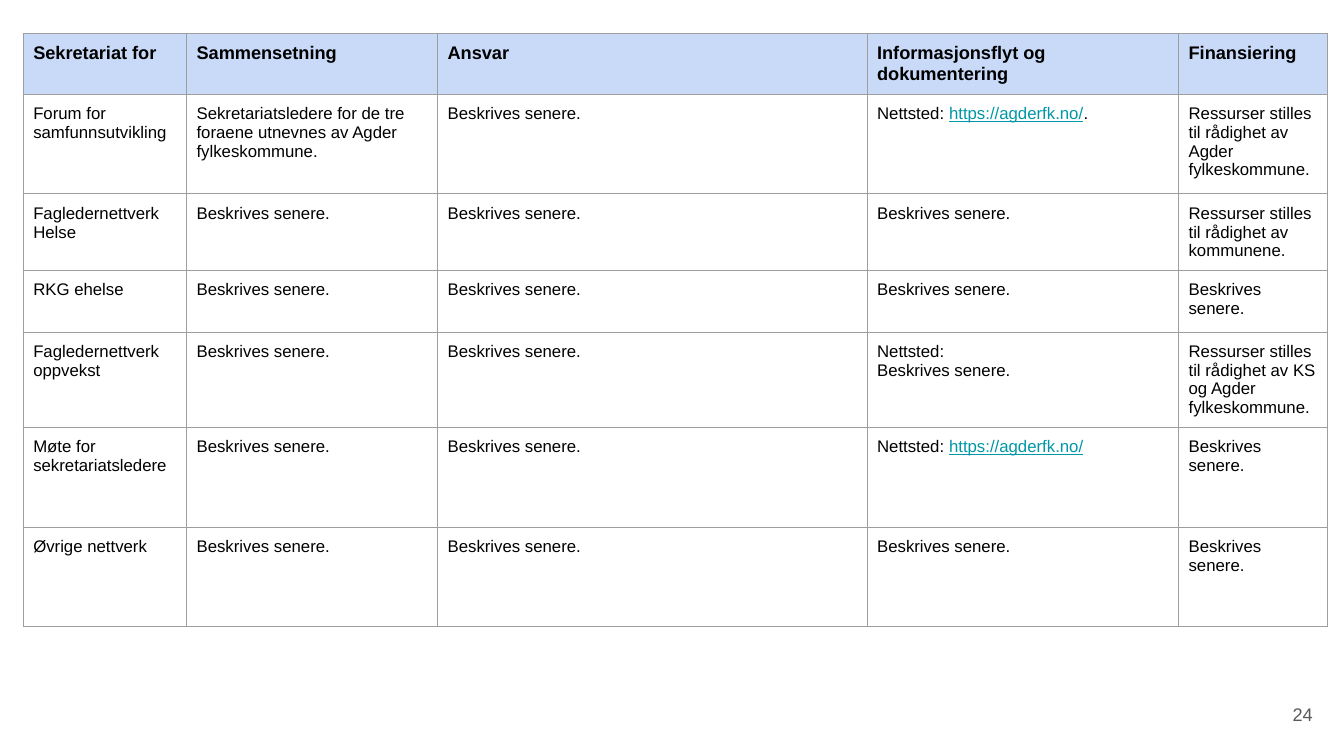
from lxml import etree
from pptx import Presentation
from pptx import util as u
from pptx.dml.color import RGBColor
from pptx.enum import text
from pptx.oxml.ns import qn

SLIDE_W, SLIDE_H = 13.33, 7.5
FONT = "Arial"
BLACK, GREY, BORDER = "000000", "595959", "9E9E9E"
LINK, HEADER_FILL = "0097A7", "C9DAF8"

COLUMNS = [1.62, 2.49, 4.26, 3.09, 1.48]
ROWS = [0.58, 0.99, 0.61, 0.61, 0.47, 0.99, 0.99]

LATER = "Beskrives senere."
SITE = "https://agderfk.no/"
HEADINGS = ["Sekretariat for", "Sammensetning", "Ansvar",
            "Informasjonsflyt og dokumentering", "Finansiering"]
# A cell is a string with one paragraph per line
BODY = [
    ["Forum for samfunnsutvikling",
     "Sekretariatsledere for de tre foraene utnevnes av Agder fylkeskommune.",
     LATER, f"Nettsted: {SITE}.",
     "Ressurser stilles til rådighet av Agder fylkeskommune."],
    ["Fagledernettverk Helse", LATER, LATER, LATER,
     "Ressurser stilles til rådighet av kommunene."],
    ["RKG ehelse", LATER, LATER, LATER, LATER],
    ["Fagledernettverk oppvekst", LATER, LATER, f"Nettsted:\n{LATER}",
     "Ressurser stilles til rådighet av KS og Agder fylkeskommune."],
    ["Møte for sekretariatsledere", LATER, LATER, f"Nettsted: {SITE}", LATER],
    ["Øvrige nettverk", LATER, LATER, LATER, LATER],
]


def rgb(color):
    return RGBColor.from_string(color)


def add_run(p, content, size, color, bold=False, underline=False):
    r = p.add_run()
    r.text = content
    r.font.name, r.font.size = FONT, u.Pt(size)
    r.font.bold, r.font.underline = bold, underline
    r.font.color.rgb = rgb(color)


def write(tf, content, size=12, color=BLACK, bold=False, align=None):
    """Write one paragraph per line, with web addresses as link text."""
    tf.word_wrap = True
    for i, line in enumerate(content.split("\n")):
        p = tf.add_paragraph() if i else tf.paragraphs[0]
        p.alignment = align
        before, site, after = line.partition(SITE)
        if before:
            add_run(p, before, size, color, bold)
        if site:
            add_run(p, site, size, LINK, bold, underline=True)
        if after:
            add_run(p, after, size, color, bold)


def set_margins(box, inches):
    box.margin_left = box.margin_right = u.Inches(inches)
    box.margin_top = box.margin_bottom = u.Inches(inches)


def set_borders(cell, color=BORDER, width=0.75):
    tc_pr = cell._tc.get_or_add_tcPr()
    for i, side in enumerate(("lnL", "lnR", "lnT", "lnB")):
        ln = etree.Element(qn(f"a:{side}"), w=str(u.Pt(width)))
        fill = etree.SubElement(ln, qn("a:solidFill"))
        etree.SubElement(fill, qn("a:srgbClr"), val=color)
        tc_pr.insert(i, ln)


def add_cell(cell, content, header):
    set_margins(cell, 0.1)
    if header:
        cell.fill.solid()
        cell.fill.fore_color.rgb = rgb(HEADER_FILL)
    else:
        cell.fill.background()
    set_borders(cell)
    write(cell.text_frame, content, size=13 if header else 12, bold=header)


def add_grid(s, left, top):
    frame = s.shapes.add_table(len(ROWS), len(COLUMNS), u.Inches(left), u.Inches(top),
                               u.Inches(sum(COLUMNS)), u.Inches(sum(ROWS)))
    table = frame.table
    table.horz_banding = False
    for column, width in zip(table.columns, COLUMNS):
        column.width = u.Inches(width)
    for row, height in zip(table.rows, ROWS):
        row.height = u.Inches(height)
    for i, contents in enumerate([HEADINGS] + BODY):
        for j, content in enumerate(contents):
            add_cell(table.cell(i, j), content, header=i == 0)


def add_page_number(s, number):
    sp = s.shapes.add_textbox(u.Inches(12.35), u.Inches(6.8), u.Inches(0.8), u.Inches(0.57))
    tf = sp.text_frame
    set_margins(tf, 0.13)
    tf.vertical_anchor = text.MSO_ANCHOR.MIDDLE
    write(tf, number, size=13, color=GREY, align=text.PP_ALIGN.RIGHT)


def main():
    prs = Presentation()
    prs.slide_width, prs.slide_height = u.Inches(SLIDE_W), u.Inches(SLIDE_H)
    s = prs.slides.add_slide(prs.slide_layouts[6])

    # Overview of the secretariats
    add_grid(s, left=0.23, top=0.33)

    # Page number
    add_page_number(s, "24")

    prs.save("out.pptx")


if __name__ == "__main__":
    main()
